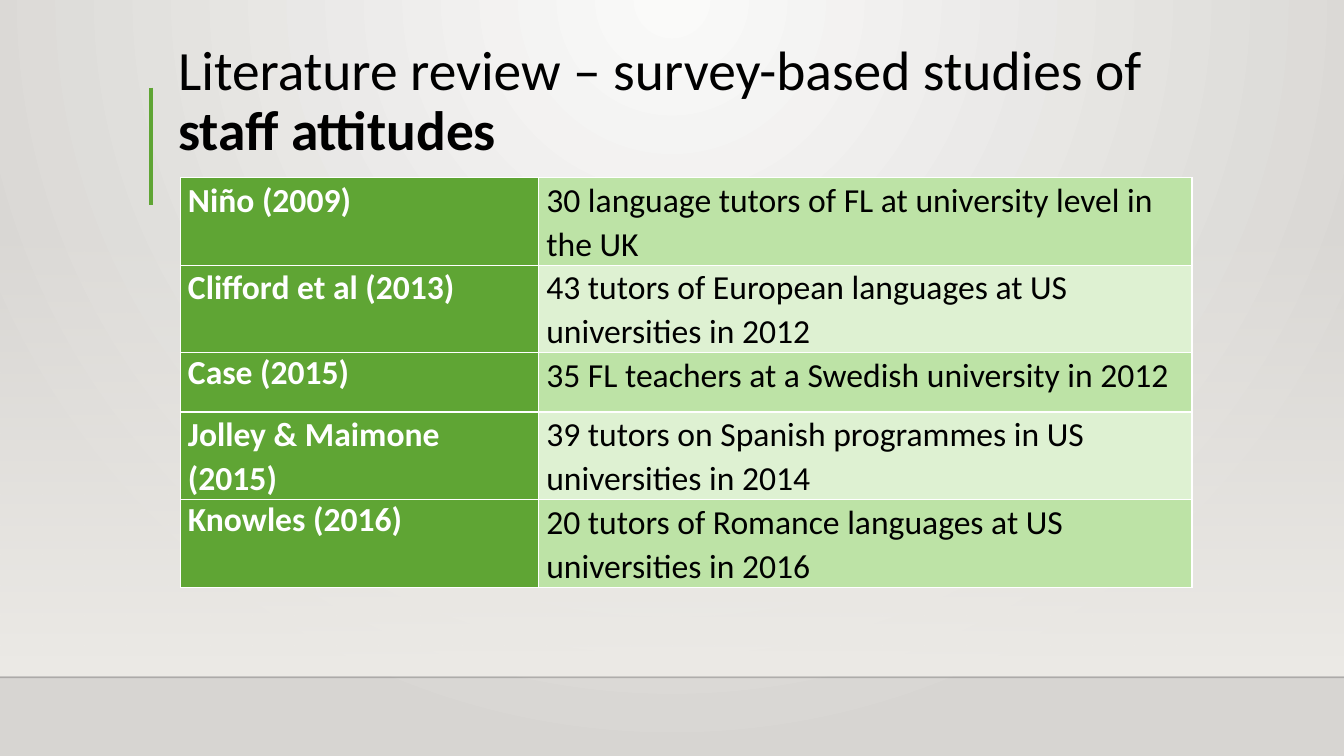
from lxml.etree import SubElement
from pptx import Presentation
from pptx.dml.color import RGBColor
from pptx.enum.shapes import MSO_CONNECTOR, MSO_SHAPE
from pptx.enum.text import MSO_ANCHOR, MSO_AUTO_SIZE, PP_ALIGN
from pptx.oxml import parse_xml
from pptx.oxml.ns import nsdecls, qn
from pptx.util import Pt

WIDTH, HEIGHT = 960, 540
GREEN, WHITE, BLACK = "5FA534", "FFFFFF", "000000"
BANDS = ["BDE3A6", "DEF1D2"]
COLUMN_WIDTHS = [256, 466.5]
STUDIES = [
    ("Niño (2009)", "30 language tutors of FL at university level in the UK", 62.7, 1.07),
    ("Clifford et al (2013)", "43 tutors of European languages at US universities in 2012", 62.7, 1.07),
    ("Case (2015)", "35 FL teachers at a Swedish university in 2012", 42.3, 1),
    ("Jolley & Maimone (2015)", "39 tutors on Spanish programmes in US universities in 2014", 62.7, 1.07),
    ("Knowles (2016)", "20 tutors of Romance languages at US universities in 2016", 62.7, 1),
]


def color(value):
    return RGBColor.from_string(value)


def write(paragraph, text, size=24, ink=BLACK, bold=False, spacing=1.0):
    paragraph.alignment = PP_ALIGN.LEFT
    paragraph.line_spacing = spacing
    run = paragraph.add_run()
    run.text = text
    run.font.name = "Calibri"
    run.font.size = Pt(size)
    run.font.bold = bold
    run.font.color.rgb = color(ink)


def blend(fill, start, end):
    fill.gradient()
    for stop, position, shade in zip(fill.gradient_stops, (0, 1), (start, end)):
        stop.position = position
        stop.color.rgb = color(shade)


def set_alpha(element, percent):
    tint = next(element.iter(qn("a:srgbClr")))
    SubElement(tint, qn("a:alpha")).set("val", str(percent * 1000))


def draw_line(slide, x1, y1, x2, y2, ink, weight):
    line = slide.shapes.add_connector(MSO_CONNECTOR.STRAIGHT, Pt(x1), Pt(y1), Pt(x2), Pt(y2))
    line.line.color.rgb = color(ink)
    line.line.width = Pt(weight)
    SubElement(line._element.spPr, qn("a:effectLst"))
    return line


def add_backdrop(slide, width, wall_top, wall_height):
    blend(slide.background.fill, "FAFAF9", "D7D5D2")
    linear = next(slide._element.iter(qn("a:lin")))
    linear.getparent().replace(linear, parse_xml(
        f'<a:path {nsdecls("a")} path="circle">'
        '<a:fillToRect l="43000" t="0" r="43000" b="100000"/></a:path>'))

    wall = slide.shapes.add_shape(MSO_SHAPE.RECTANGLE, 0, Pt(wall_top), Pt(width), Pt(wall_height))
    wall.shadow.inherit = False
    wall.line.fill.background()
    blend(wall.fill, "EDEBE7", "EDEBE7")
    wall.fill.gradient_angle = 270
    set_alpha(wall._element.spPr, 0)

    floor_y = wall_top + wall_height + 1.5
    floor_edge = draw_line(slide, 0, floor_y, width, floor_y, "000001", 1)
    set_alpha(floor_edge._element.spPr, 20)


def add_title(slide, left, top, width, height):
    draw_line(slide, left - 12.2, top + 26, left - 12.2, top + 110, GREEN, 3)
    title = slide.shapes.title
    title.left, title.top, title.width, title.height = map(Pt, (left, top, width, height))
    frame = title.text_frame
    frame.auto_size = MSO_AUTO_SIZE.NONE
    frame.word_wrap = True
    frame.vertical_anchor = MSO_ANCHOR.BOTTOM
    heading = frame.paragraphs[0]
    write(heading, "Literature review – survey-based studies of ", size=39.6, spacing=0.9)
    write(heading, "staff attitudes", size=39.6, bold=True, spacing=0.9)


def fill_cell(cell, text, shade, **text_format):
    cell.margin_left = cell.margin_right = Pt(5.4)
    cell.margin_top = cell.margin_bottom = 0
    cell.fill.solid()
    cell.fill.fore_color.rgb = color(shade)
    write(cell.text_frame.paragraphs[0], text, **text_format)
    properties = cell._tc.get_or_add_tcPr()
    for index, side in enumerate("LRTB"):
        properties.insert(index, parse_xml(
            f'<a:ln{side} {nsdecls("a")} w="12700"><a:solidFill>'
            f'<a:srgbClr val="{WHITE}"/></a:solidFill></a:ln{side}>'))


def add_studies(slide, left, top):
    height = sum(study[2] for study in STUDIES)
    studies = slide.shapes.add_table(
        len(STUDIES), len(COLUMN_WIDTHS), Pt(left), Pt(top), Pt(sum(COLUMN_WIDTHS)), Pt(height)).table
    for column, width in zip(studies.columns, COLUMN_WIDTHS):
        column.width = Pt(width)
    for index, (author, sample, row_height, spacing) in enumerate(STUDIES):
        studies.rows[index].height = Pt(row_height)
        fill_cell(studies.cell(index, 0), author, GREEN, ink=WHITE, bold=True, spacing=spacing)
        fill_cell(studies.cell(index, 1), sample, BANDS[index % 2], spacing=1.07)


def main():
    presentation = Presentation()
    presentation.slide_width, presentation.slide_height = Pt(WIDTH), Pt(HEIGHT)
    slide = presentation.slides.add_slide(presentation.slide_layouts[5])
    add_backdrop(slide, WIDTH, 158.4, 324)
    add_title(slide, 120, 36.7, 749.5, 82.8)
    add_studies(slide, 128.9, 126.7)
    presentation.save("out.pptx")


if __name__ == "__main__":
    main()
